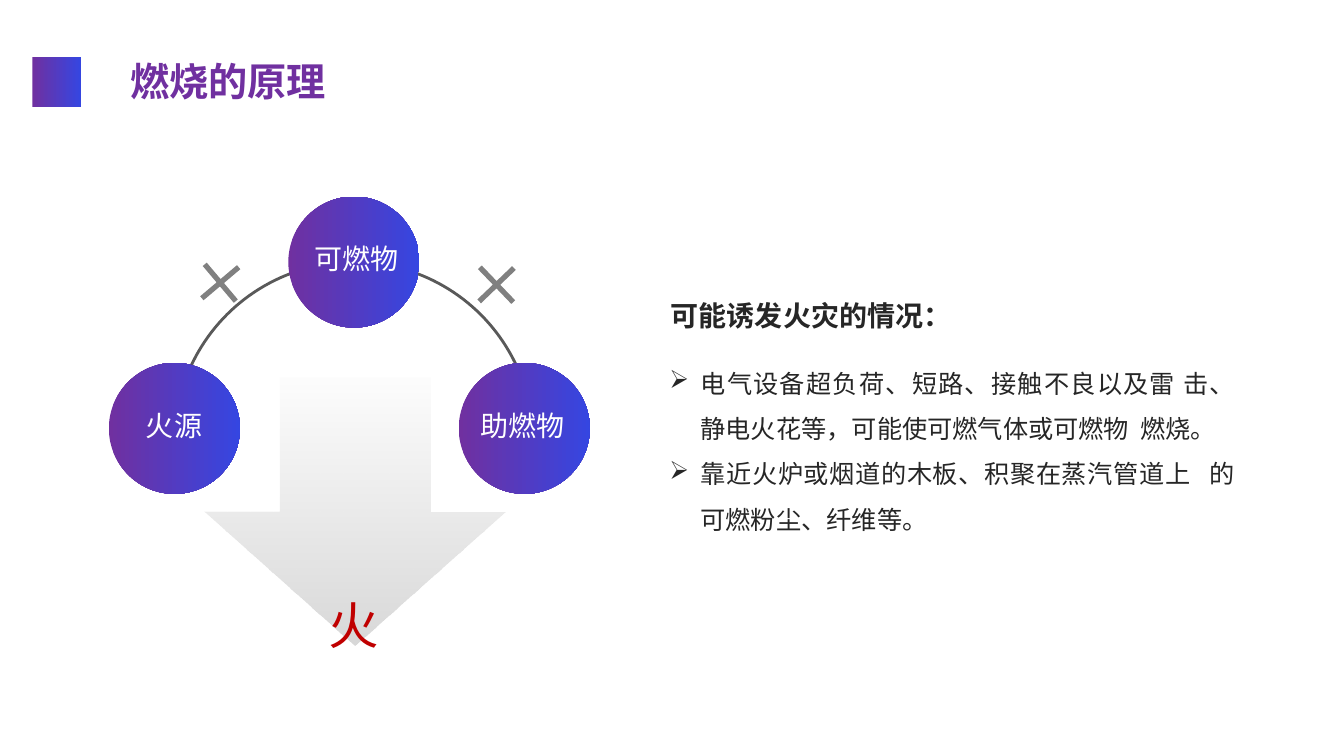
import pptx
import pptx.util
import pptx.dml.color
import pptx.enum.shapes
import pptx.enum.text
import pptx.oxml
import pptx.oxml.ns
from dataclasses import dataclass

Inches = pptx.util.Inches
Pt = pptx.util.Pt
SHAPE = pptx.enum.shapes.MSO_SHAPE
ALIGN = pptx.enum.text.PP_ALIGN


@dataclass(frozen=True)
class Theme:
    purple: str = "7030A0"
    blue: str = "3546E1"
    line: str = "595959"
    cross: str = "808080"
    arrow: str = "D9D9D9"
    white: str = "FFFFFF"
    fire: str = "C00000"
    body: str = "262626"
    font: str = "Noto Sans CJK SC"
    fire_font: str = "Times New Roman"
    title_size: int = 28
    fire_size: int = 36
    label_size: int = 20
    body_size: int = 18


THEME = Theme()


def rgb(color):
    return pptx.dml.color.RGBColor.from_string(color)


def add_child(parent, tag, **attributes):
    child = pptx.oxml.ns.qn(tag)
    element = parent.makeelement(child, attributes)
    parent.append(element)
    return element


def fill_solid(fill, color):
    fill.solid()
    fill.fore_color.rgb = rgb(color)


def fill_gradient(fill, start, end, clockwise=0):
    fill.gradient()
    fill.gradient_angle = 360 - clockwise
    for stop, color, position in zip(fill.gradient_stops, (start, end), (0, 1)):
        stop.color.rgb = rgb(color)
        stop.position = position


def add_shape(slide, preset, left, top, width, height):
    sp = slide.shapes.add_shape(
        preset, Inches(left), Inches(top), Inches(width), Inches(height))
    sp.shadow.inherit = False
    sp.line.fill.background()
    return sp


def add_brand_shape(slide, preset, left, top, width, height):
    sp = add_shape(slide, preset, left, top, width, height)
    fill_gradient(sp.fill, THEME.purple, THEME.blue)


def add_arc(slide, left, top, size):
    sp = add_shape(slide, SHAPE.ARC, left, top, size, size)
    sp.adjustments[0], sp.adjustments[1] = 114.31, 210.2
    sp.fill.background()
    sp.line.color.rgb = rgb(THEME.line)
    sp.line.width = Pt(2)


def add_cross(slide, left, top, rotation):
    sp = add_shape(slide, SHAPE.MATH_PLUS, left, top, 0.65, 0.65)
    sp.adjustments[0] = 0.08
    sp.rotation = rotation
    fill_solid(sp.fill, THEME.cross)


def add_down_arrow(slide, left, top, width, height):
    sp = add_shape(slide, SHAPE.DOWN_ARROW, left, top, width, height)
    fill_gradient(sp.fill, THEME.arrow, THEME.arrow, clockwise=90)
    first_color = next(sp.element.iter(pptx.oxml.ns.qn("a:gs")))[0]
    add_child(first_color, "a:alpha", val="5000")


def add_run(p, text, size, color, bold=False, font=THEME.font):
    r = p.add_run()
    r.text = text
    r.font.size = Pt(size)
    r.font.bold = bold
    fill_solid(r.font.fill, color)
    r.font.name = font
    add_child(r.font._element, "a:ea", typeface=THEME.font)
    return r


def prepare_frame(sp, wrap):
    tf = sp.text_frame
    tf.word_wrap = wrap
    tf.auto_size = pptx.enum.text.MSO_AUTO_SIZE.SHAPE_TO_FIT_TEXT
    tf.vertical_anchor = pptx.enum.text.MSO_ANCHOR.TOP
    return tf


def add_text_frame(slide, left, top, width, height, wrap=False):
    sp = slide.shapes.add_textbox(
        Inches(left), Inches(top), Inches(width), Inches(height))
    return prepare_frame(sp, wrap)


def set_title(slide, text):
    title = slide.shapes.title
    title.left, title.top = Inches(1.19), Inches(0.52)
    title.width, title.height = Inches(2.17), Inches(0.57)
    p = prepare_frame(title, wrap=False).paragraphs[0]
    p.alignment = ALIGN.LEFT
    r = add_run(p, text, THEME.title_size, THEME.purple, bold=True)
    fill_gradient(r.font.fill, THEME.purple, THEME.blue)


def add_bullets(slide, items, left, top, width, height):
    tf = add_text_frame(slide, left, top, width, height, wrap=True)
    for i, item in enumerate(items):
        p = tf.add_paragraph() if i else tf.paragraphs[0]
        p.alignment = ALIGN.JUSTIFY
        p.line_spacing = 1.5
        pPr = p._p.get_or_add_pPr()
        pPr.set("marL", str(Inches(0.31)))
        pPr.set("indent", str(-Inches(0.31)))
        add_child(pPr, "a:buChar", char="➢")
        add_run(p, item, THEME.body_size, THEME.body)


def main():
    prs = pptx.Presentation()
    prs.slide_width, prs.slide_height = Inches(13.33), Inches(7.5)
    s = prs.slides.add_slide(prs.slide_layouts.get_by_name("Title Only"))

    # Title with its square marker
    set_title(s, "燃烧的原理")
    add_brand_shape(s, SHAPE.RECTANGLE, 0.32, 0.57, 0.48, 0.49)

    # Three conditions of fire along an arc: circle corner, label box
    add_arc(s, 1.73, 2.6, 3.56)
    conditions = [
        ("火源", 1.08, 3.6, 1.35, 4.0, 0.76),
        ("可燃物", 2.86, 1.95, 3.02, 2.35, 1.04),
        ("助燃物", 4.55, 3.6, 4.67, 4.0, 1.04),
    ]
    for text, left, top, label_left, label_top, label_width in conditions:
        add_brand_shape(s, SHAPE.OVAL, left, top, 1.3, 1.3)
        tf = add_text_frame(s, label_left, label_top, label_width, 0.44)
        add_run(tf.paragraphs[0], text, THEME.label_size, THEME.white)
    add_cross(s, 1.86, 2.48, -40.2)
    add_cross(s, 4.6, 2.5, 46.2)

    # Arrow leading to fire
    add_down_arrow(s, 2.03, 3.75, 2.98, 2.65)
    tf = add_text_frame(s, 3.16, 5.84, 0.71, 0.71)
    add_run(tf.paragraphs[0], "火", THEME.fire_size, THEME.fire, font=THEME.fire_font)

    # Situations that may cause a fire
    p = add_text_frame(s, 6.54, 2.91, 3.01, 0.44).paragraphs[0]
    p.alignment = ALIGN.CENTER
    add_run(p, "可能诱发火灾的情况：", THEME.label_size, THEME.body, bold=True)
    add_bullets(s, [
        "电气设备超负荷、短路、接触不良以及雷 击、静电火花等，可能使可燃气体或可燃物  燃烧。",
        "靠近火炉或烟道的木板、积聚在蒸汽管道上   的可燃粉尘、纤维等。",
    ], 6.54, 3.45, 5.81, 1.86)

    prs.save("out.pptx")


if __name__ == "__main__":
    main()
